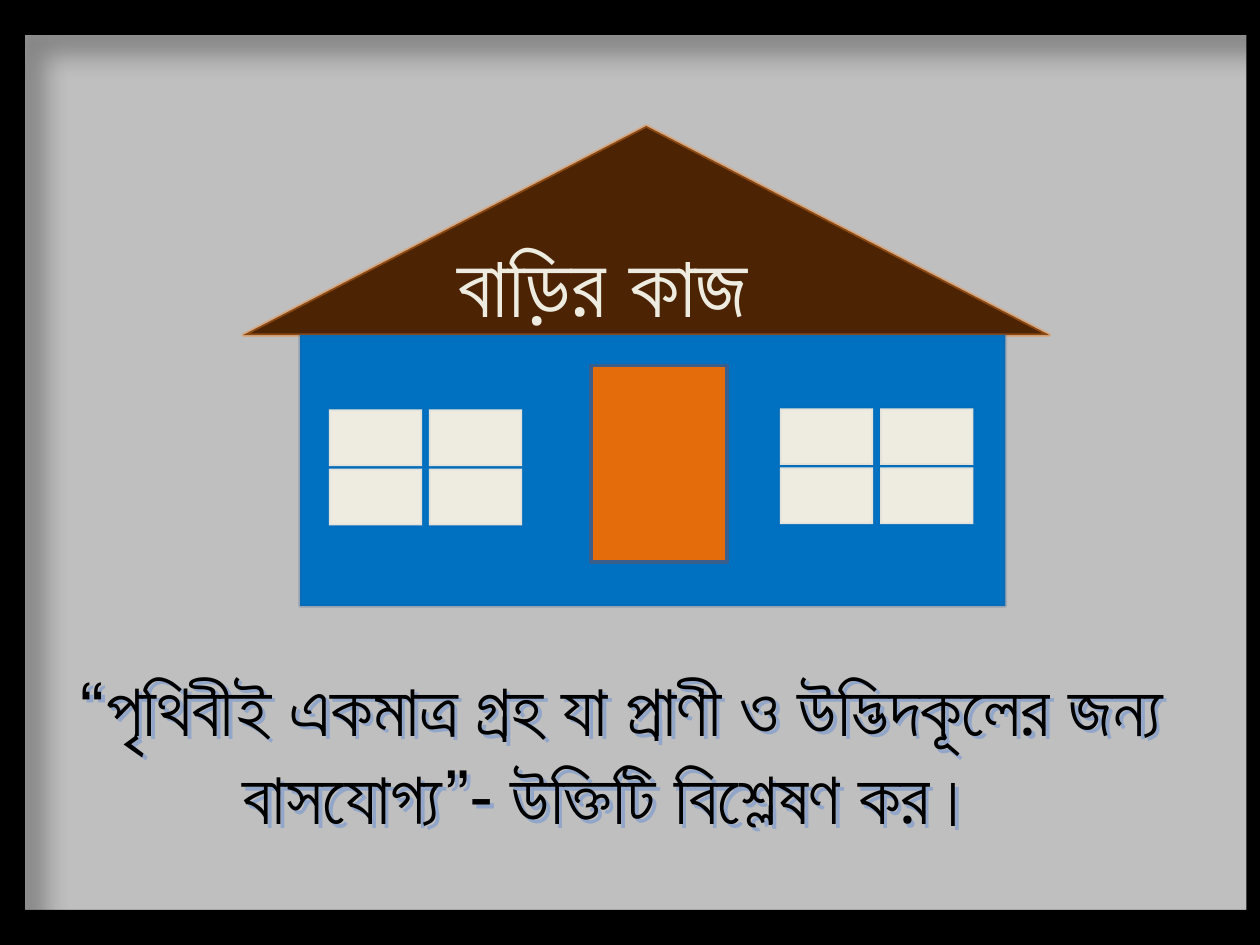
"""Homework slide: a house with a titled roof above a framed question."""
from dataclasses import dataclass
from itertools import product
from typing import Optional

from lxml import etree
from pptx import Presentation
from pptx.dml.color import RGBColor
from pptx.enum.shapes import MSO_SHAPE
from pptx.enum.text import MSO_ANCHOR, PP_ALIGN
from pptx.oxml.ns import qn
from pptx.util import Inches, Pt

TRIANGLE, RECT, FRAME = MSO_SHAPE.ISOSCELES_TRIANGLE, MSO_SHAPE.RECTANGLE, MSO_SHAPE.FRAME
MIDDLE, TOP = MSO_ANCHOR.MIDDLE, MSO_ANCHOR.TOP
LEFT, CENTER = PP_ALIGN.LEFT, PP_ALIGN.CENTER
WIDTH, HEIGHT = Inches(10), Inches(7.5)
FONT = "Roboto"
COLORS = {
    "wall_grey": "BFBFBF", "roof": "4C2403", "roof_edge": "F68528",
    "house": "0070C0", "edge": "3A5F8C", "cream": "EEECE1",
    "door": "E46C0A", "black": "000000", "text_shadow": "4F81D8",
}
PANE_W, PANE_H, PANE_DX, PANE_DY = 7.4, 6, 7.95, 6.27


@dataclass(frozen=True)
class Box:
    """A rectangle in percent of the slide's width and height."""
    x: float
    y: float
    w: float
    h: float

    def emu(self) -> tuple:
        """Return left, top, width and height in EMU."""
        return (round(self.x * WIDTH / 100), round(self.y * HEIGHT / 100),
                round(self.w * WIDTH / 100), round(self.h * HEIGHT / 100))


@dataclass(frozen=True)
class Part:
    """A filled shape with an optional edge of given opacity."""
    kind: int
    box: Box
    fill: str
    edge: Optional[str] = None
    opacity: int = 100


@dataclass(frozen=True)
class Shadow:
    """An outer shadow: opacity in percent, lengths in points, angle in degrees."""
    color: str
    opacity: int
    blur: float
    distance: float
    angle: int


def rgb(name: str) -> RGBColor:
    """Look up a named colour."""
    return RGBColor.from_string(COLORS[name])


def set_opacity(color, percent: int) -> None:
    """Add an alpha value to a colour element."""
    etree.SubElement(color, qn("a:alpha"), val=str(percent * 1000))


def add_part(s, part: Part):
    """Draw one part of the picture."""
    sp = s.shapes.add_shape(part.kind, *part.box.emu())
    sp.shadow.inherit = False
    sp.fill.solid()
    sp.fill.fore_color.rgb = rgb(part.fill)
    if part.edge is None:
        sp.line.fill.background()
    else:
        sp.line.color.rgb = rgb(part.edge)
        sp.line.width = Pt(2)
        set_opacity(sp.line._ln.find(".//" + qn("a:srgbClr")), part.opacity)
    return sp


def add_window(s, x: float, y: float) -> None:
    """Draw a window of two by two panes."""
    for row, col in product(range(2), repeat=2):
        box = Box(x + col * PANE_DX, y + row * PANE_DY, PANE_W, PANE_H)
        add_part(s, Part(RECT, box, "cream", "edge", 5))


def add_shadow(sp, shadow: Shadow) -> None:
    """Cast an outer shadow from a shape."""
    sp.shadow.inherit = False
    effects = sp._element.spPr.find(qn("a:effectLst"))
    outer = etree.SubElement(
        effects, qn("a:outerShdw"), blurRad=str(Pt(shadow.blur)),
        dist=str(Pt(shadow.distance)), dir=str(shadow.angle * 60000),
        algn="tl", rotWithShape="0")
    color = etree.SubElement(outer, qn("a:srgbClr"), val=COLORS[shadow.color])
    set_opacity(color, shadow.opacity)


def write(sp, text: str, align: int, anchor: int, color: str, **formats):
    """Write one paragraph in a shape and return its run."""
    tf = sp.text_frame
    tf.word_wrap = True
    tf.vertical_anchor = anchor
    p = tf.paragraphs[0]
    p.alignment = align
    r = p.add_run()
    r.text = text
    r.font.color.rgb = rgb(color)
    for name, value in formats.items():
        setattr(r.font, name, value)
    return r


def outline(r, color: str, width: float) -> None:
    """Outline the letters of a run."""
    ln = etree.Element(qn("a:ln"), w=str(Pt(width)))
    fill = etree.SubElement(ln, qn("a:solidFill"))
    etree.SubElement(fill, qn("a:srgbClr"), val=COLORS[color])
    r.font._element.insert(0, ln)


def main() -> None:
    """Build and save the slide."""
    prs = Presentation()
    prs.slide_width, prs.slide_height = WIDTH, HEIGHT
    s = prs.slides.add_slide(prs.slide_layouts[6])
    s.background.fill.solid()
    s.background.fill.fore_color.rgb = rgb("wall_grey")

    roof = add_part(s, Part(TRIANGLE, Box(19.3, 13.33, 64, 22.13), "roof", "roof_edge", 37))
    write(roof, "বাড়ির কাজ", LEFT, MIDDLE, "cream", name=FONT, size=Pt(49.5), bold=True)
    add_part(s, Part(RECT, Box(23.8, 35.47, 56, 28.67), "house", "edge", 20))
    add_part(s, Part(RECT, Box(46.9, 38.67, 10.8, 20.8), "door", "edge"))
    add_window(s, 26.1, 43.33)
    add_window(s, 61.9, 43.2)

    question = s.shapes.add_textbox(*Box(3, 69.47, 92.4, 18.4).emu())
    r = write(question, "“পৃথিবীই একমাত্র গ্রহ যা প্রাণী ও উদ্ভিদকূলের জন্য বাসযোগ্য”- উক্তিটি বিশ্লেষণ কর। ",
              CENTER, TOP, "black", name=FONT, size=Pt(42))
    outline(r, "black", 0.75)
    add_shadow(question, Shadow("text_shadow", 40, 0, 3, 45))

    frame = add_part(s, Part(FRAME, Box(-0.8, 0, 102.5, 100), "black"))
    frame.adjustments[0] = 0.037
    add_shadow(frame, Shadow("black", 30, 15, 18, 45))
    prs.save("out.pptx")


if __name__ == "__main__":
    main()
